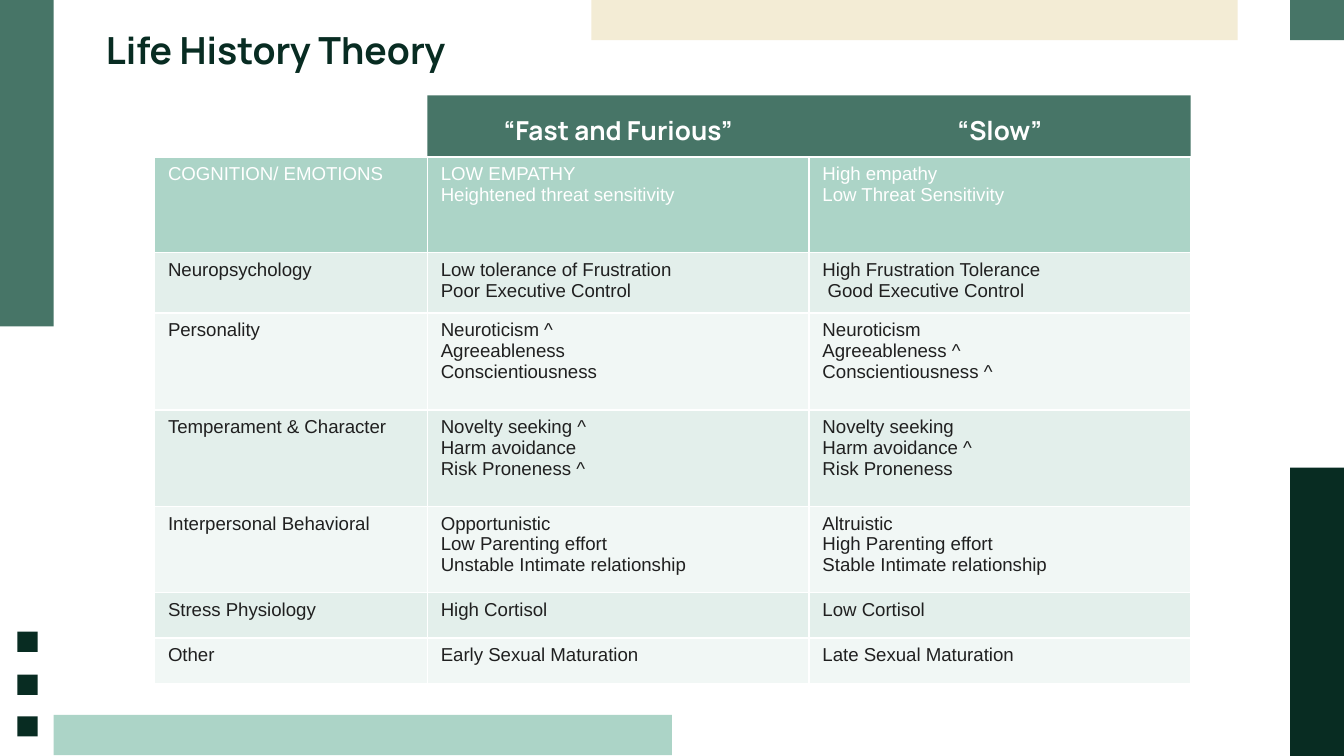
from lxml import etree
from pptx import Presentation
from pptx.dml.color import RGBColor
from pptx.enum.shapes import MSO_SHAPE
from pptx.enum.text import MSO_ANCHOR, PP_ALIGN
from pptx.oxml.ns import qn
from pptx.util import Inches, Pt

RECT = MSO_SHAPE.RECTANGLE
MIDDLE, TOP = MSO_ANCHOR.MIDDLE, MSO_ANCHOR.TOP
CENTER, LEFT = PP_ALIGN.CENTER, PP_ALIGN.LEFT

COLORS = {
    "dark": "082C22", "green": "477567", "mint": "ACD4C7", "cream": "F3ECD5",
    "band": "E3EFEB", "pale": "F1F7F5", "white": "FFFFFF", "text": "202020",
}
BARS = [
    (0.4, 5.32, 4.6, 0.3, "mint"),
    (0, 0, 0.4, 2.43, "green"),
    (9.6, 0, 0.4, 0.3, "green"),
    (4.4, 0, 4.81, 0.3, "cream"),
    (9.6, 3.48, 0.4, 2.15, "dark"),
]
SQUARE_TOPS = [4.7, 5.02, 5.33]
COL_WIDTHS = [2.03, 2.84, 2.84]
TABLE_LEFT, TABLE_TOP = 1.15, 1.17
ROWS = [
    (0.71, "COGNITION/ EMOTIONS", "LOW EMPATHY\nHeightened threat sensitivity",
     "High empathy\nLow Threat Sensitivity"),
    (0.45, "Neuropsychology", "Low tolerance of Frustration\nPoor Executive Control",
     "High Frustration Tolerance\n Good Executive Control"),
    (0.72, "Personality", "Neuroticism ^\nAgreeableness\nConscientiousness",
     "Neuroticism\nAgreeableness ^\nConscientiousness ^"),
    (0.72, "Temperament & Character", "Novelty seeking ^\nHarm avoidance\nRisk Proneness ^",
     "Novelty seeking\nHarm avoidance ^\nRisk Proneness"),
    (0.64, "Interpersonal Behavioral",
     "Opportunistic\nLow Parenting effort\nUnstable Intimate relationship",
     "Altruistic\nHigh Parenting effort\nStable Intimate relationship"),
    (0.34, "Stress Physiology", "High Cortisol", "Low Cortisol"),
    (0.34, "Other", "Early Sexual Maturation", "Late Sexual Maturation"),
]


def rgb(name):
    """Return the named colour."""
    return RGBColor.from_string(COLORS[name])


def write(tf, text, size, font, color, bold=False, align=LEFT):
    """Fill a text frame with one paragraph per line of text."""
    for i, line in enumerate(text.split("\n")):
        p = tf.paragraphs[0] if i == 0 else tf.add_paragraph()
        p.alignment = align
        r = p.add_run()
        r.text = line
        r.font.size, r.font.name, r.font.bold = Pt(size), font, bold
        r.font.color.rgb = rgb(color)


def set_frame(tf, anchor):
    """Set wrapping, insets and vertical anchor of a text frame."""
    tf.word_wrap = True
    tf.vertical_anchor = anchor
    tf.margin_left = tf.margin_right = tf.margin_top = tf.margin_bottom = Inches(0.1)


def add_bar(s, left, top, width, height, color):
    """Add a plain filled rectangle."""
    sp = s.shapes.add_shape(RECT, Inches(left), Inches(top), Inches(width), Inches(height))
    sp.shadow.inherit = False
    sp.fill.solid()
    sp.fill.fore_color.rgb = rgb(color)
    sp.line.fill.background()
    return sp


def add_title(s, text):
    """Add the slide title."""
    sp = s.shapes.add_textbox(Inches(0.69), Inches(0.1), Inches(8.43), Inches(0.63))
    set_frame(sp.text_frame, TOP)
    write(sp.text_frame, text, 20, "Manrope", "dark", bold=True)


def add_header(s, left, width, text):
    """Add a column heading above the table."""
    sp = add_bar(s, left, 0.71, width, 0.51, "green")
    set_frame(sp.text_frame, MIDDLE)
    write(sp.text_frame, text, 14, "Manrope", "white", bold=True, align=CENTER)


def set_borders(cell):
    """Draw thin white lines on all sides of a cell."""
    tc_pr = cell._tc.get_or_add_tcPr()
    for i, side in enumerate(("a:lnL", "a:lnR", "a:lnT", "a:lnB")):
        ln = etree.Element(qn(side), w=str(Pt(1)))
        fill = etree.SubElement(ln, qn("a:solidFill"))
        etree.SubElement(fill, qn("a:srgbClr"), val=COLORS["white"])
        tc_pr.insert(i, ln)


def add_comparison(s):
    """Add the table that compares both strategies."""
    table = s.shapes.add_table(
        len(ROWS), len(COL_WIDTHS), Inches(TABLE_LEFT), Inches(TABLE_TOP),
        Inches(sum(COL_WIDTHS)), Inches(sum(row[0] for row in ROWS))).table
    for column, width in zip(table.columns, COL_WIDTHS):
        column.width = Inches(width)
    for i, (height, *texts) in enumerate(ROWS):
        table.rows[i].height = Inches(height)
        fill = "mint" if i == 0 else "band" if i % 2 else "pale"
        for j, text in enumerate(texts):
            cell = table.cell(i, j)
            cell.fill.solid()
            cell.fill.fore_color.rgb = rgb(fill)
            set_borders(cell)
            write(cell.text_frame, text, 10, "Arial", "text" if i else "white")


def main():
    """Build the slide and save it."""
    prs = Presentation()
    prs.slide_width = Inches(10)
    prs.slide_height = prs.slide_width * 9 // 16
    s = prs.slides.add_slide(prs.slide_layouts[6])
    for bar in BARS:
        add_bar(s, *bar)
    for top in SQUARE_TOPS:
        add_bar(s, 0.13, top, 0.15, 0.15, "dark")
    add_title(s, "Life History Theory")
    for j, heading in enumerate(("“Fast and Furious”", "“Slow”"), start=1):
        add_header(s, TABLE_LEFT + sum(COL_WIDTHS[:j]), COL_WIDTHS[j], heading)
    add_comparison(s)
    prs.save("out.pptx")


if __name__ == "__main__":
    main()
